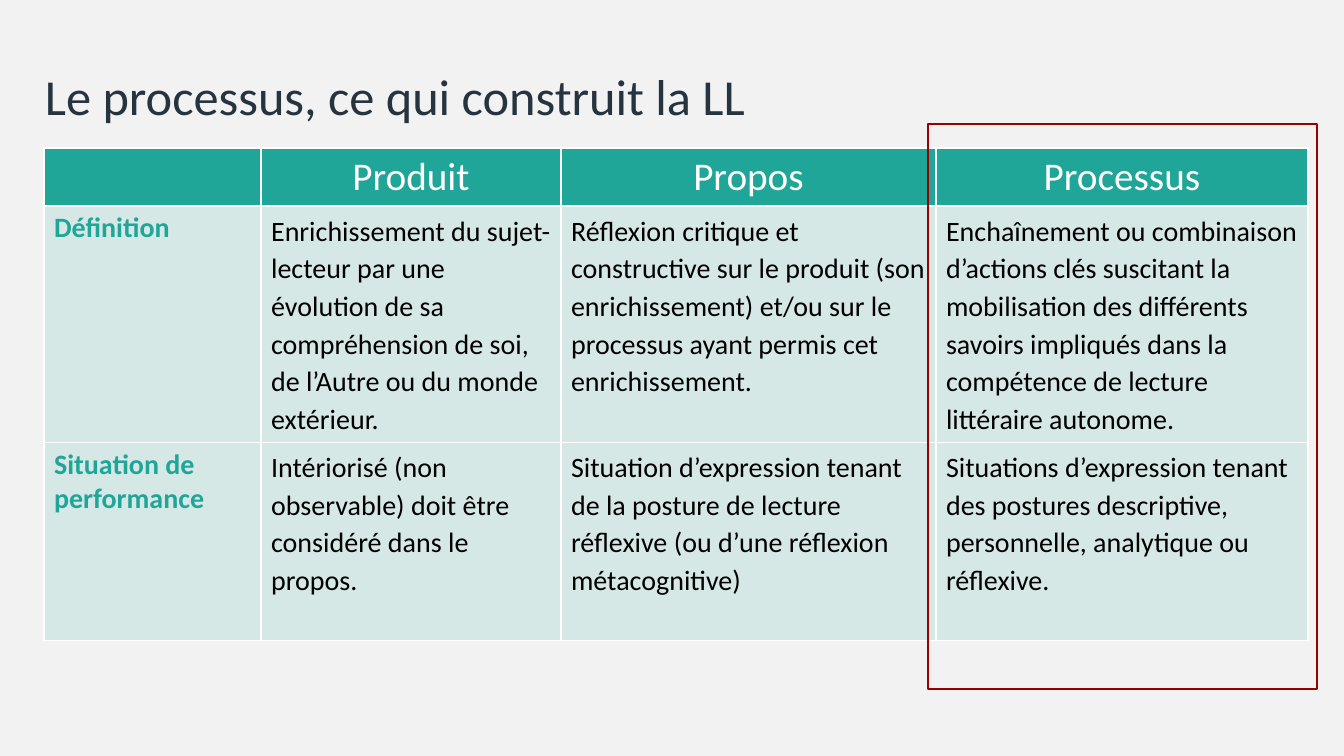
from lxml.etree import SubElement
from pptx import Presentation
from pptx.dml.color import RGBColor
from pptx.enum.shapes import MSO_SHAPE
from pptx.enum.text import PP_ALIGN
from pptx.oxml import parse_xml
from pptx.oxml.ns import nsdecls, qn
from pptx.util import Pt

SCALE = 914400 / 100.8
TEAL, WHITE, BLACK = "1FA699", "FFFFFF", "000000"
COLUMNS = [217, 300, 375, 372]
ROWS = [58, 236, 198]
CELLS = [
    ["", "Produit", "Propos", "Processus"],
    ["Définition",
     "Enrichissement du sujet-lecteur par une évolution de sa compréhension de soi, de l’Autre ou du monde extérieur.",
     "Réflexion critique et constructive sur le produit (son enrichissement) et/ou sur le processus ayant permis cet enrichissement.",
     "Enchaînement ou combinaison d’actions clés suscitant la mobilisation des différents savoirs impliqués dans la compétence de lecture littéraire autonome."],
    ["Situation de performance",
     "Intériorisé (non observable) doit être considéré dans le propos.",
     "Situation d’expression tenant de la posture de lecture réflexive (ou d’une réflexion métacognitive)",
     "Situations d’expression tenant des postures descriptive, personnelle, analytique ou réflexive."],
]


def px(n):
    """Convert pixels to EMU."""
    return round(n * SCALE)


def rgb(color):
    """Turn a hex string into a colour."""
    return RGBColor.from_string(color)


def add_run(p, text, size, color, bold=False):
    """Append a formatted run to a paragraph."""
    r = p.add_run()
    r.text = text
    r.font.name = "Calibri"
    r.font.size = Pt(size)
    r.font.bold = bold
    r.font.color.rgb = rgb(color)


def style_cell(cell, header):
    """Fill a cell and give it thin white borders."""
    cell.fill.solid()
    cell.fill.fore_color.rgb = rgb(TEAL)
    tc_pr = cell._tc.get_or_add_tcPr()
    if not header:
        SubElement(tc_pr.find(".//" + qn("a:srgbClr")), qn("a:alpha"), val="13000")
    for i, side in enumerate("LRTB"):
        tc_pr.insert(i, parse_xml(
            f'<a:ln{side} {nsdecls("a")} w="12700"><a:solidFill>'
            f'<a:srgbClr val="{WHITE}"/></a:solidFill></a:ln{side}>'))


def add_title(s, x, y, w, h):
    """Place the slide title."""
    tf = s.shapes.add_textbox(px(x), px(y), px(w), px(h)).text_frame
    tf.word_wrap = True
    p = tf.paragraphs[0]
    p.line_spacing = 0.9
    add_run(p, "Le processus, ce qui construit la LL", 36, "263440")


def add_comparison(s, x, y):
    """Place the comparison table."""
    table = s.shapes.add_table(len(ROWS), len(COLUMNS), px(x), px(y),
                               px(sum(COLUMNS)), px(sum(ROWS))).table
    for column, w in zip(table.columns, COLUMNS):
        column.width = px(w)
    for i, (row, h) in enumerate(zip(table.rows, ROWS)):
        row.height = px(h)
        for j, cell in enumerate(row.cells):
            style_cell(cell, i == 0)
            p = cell.text_frame.paragraphs[0]
            if not CELLS[i][j]:
                continue
            if i == 0:
                p.alignment = PP_ALIGN.CENTER
                add_run(p, CELLS[i][j], 28, WHITE)
            elif j == 0:
                add_run(p, CELLS[i][j], 20, TEAL, True)
            else:
                p.line_spacing = 1.1
                add_run(p, CELLS[i][j], 20, BLACK)


def add_highlight(s, x, y, w, h):
    """Frame the column in focus."""
    sp = s.shapes.add_shape(MSO_SHAPE.RECTANGLE, px(x), px(y), px(w), px(h))
    sp.shadow.inherit = False
    sp.fill.background()
    sp.line.color.rgb = rgb("950301")
    sp.line.width = Pt(1)


def main():
    """Build and save the slide."""
    prs = Presentation()
    prs.slide_width, prs.slide_height = px(1344), px(756)
    s = prs.slides.add_slide(prs.slide_layouts[6])
    s.background.fill.solid()
    s.background.fill.fore_color.rgb = rgb("F2F2F2")
    add_comparison(s, 44, 148)
    add_title(s, 35, 67, 1159, 146)
    add_highlight(s, 928, 124, 389, 565)
    prs.save("out.pptx")


if __name__ == "__main__":
    main()
